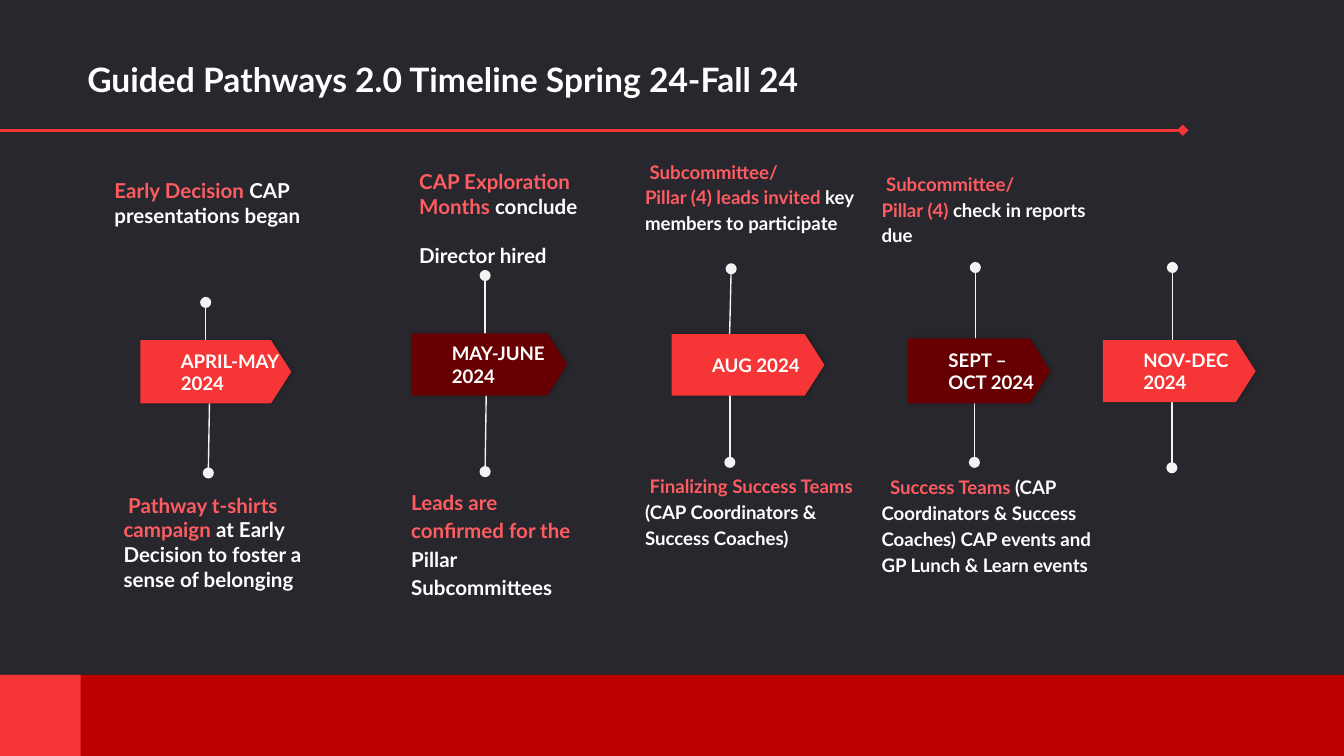
from lxml import etree
from pptx import Presentation
from pptx.dml.color import RGBColor
from pptx.enum.shapes import MSO_CONNECTOR, MSO_SHAPE
from pptx.enum.text import MSO_ANCHOR, PP_ALIGN
from pptx.oxml.ns import qn
from pptx.util import Pt

RECT, PENTAGON = MSO_SHAPE.RECTANGLE, MSO_SHAPE.PENTAGON
STRAIGHT = MSO_CONNECTOR.STRAIGHT
TOP, MIDDLE, BOTTOM = MSO_ANCHOR.TOP, MSO_ANCHOR.MIDDLE, MSO_ANCHOR.BOTTOM
LEFT = PP_ALIGN.LEFT

COLORS = {
    "back": "27272D",
    "red": "F63536",
    "band": "BC0000",
    "dark": "660003",
    "coral": "FF5C61",
    "white": "FFFFFF",
    "stem": "F3F3F3",
    "black": "000000",
}


def color(name):
    return RGBColor.from_string(COLORS[name])


def write(frame, paras, size=10, anchor=TOP, inset=(0, 0, 0, 0),
          spacing=1.0, gap=0, indent=0):
    """Fill a frame; each paragraph is a list of (text, color) runs."""
    frame.word_wrap = True
    frame.vertical_anchor = anchor
    (frame.margin_left, frame.margin_top,
     frame.margin_right, frame.margin_bottom) = map(Pt, inset)
    for i, runs in enumerate(paras):
        para = frame.add_paragraph() if i else frame.paragraphs[0]
        para.alignment = LEFT
        para.line_spacing = spacing
        if i:
            para.space_before = Pt(gap)
        elif indent:
            para._p.get_or_add_pPr().set("indent", str(Pt(indent)))
        for text, tint in runs:
            run = para.add_run()
            run.text = text
            run.font.name = "Lato"
            run.font.size = Pt(size)
            run.font.bold = True
            run.font.color.rgb = color(tint)


class Deck:
    def __init__(self):
        self.prs = Presentation()
        self.prs.slide_width, self.prs.slide_height = Pt(720), Pt(405)
        self.slide = self.prs.slides.add_slide(self.prs.slide_layouts[5])
        fill = self.slide.background.fill
        fill.solid()
        fill.fore_color.rgb = color("back")

    def title(self, text, box):
        shape = self.slide.shapes.title
        shape.left, shape.top, shape.width, shape.height = map(Pt, box)
        write(shape.text_frame, [[(text, "white")]], size=18,
              anchor=BOTTOM, inset=(11.5, 7.2, 7.2, 7.2))

    def block(self, kind, box, tint):
        shape = self.slide.shapes.add_shape(kind, *map(Pt, box))
        shape.shadow.inherit = False
        shape.fill.solid()
        shape.fill.fore_color.rgb = color(tint)
        shape.line.fill.background()
        return shape

    def tag(self, box, tint, lines):
        """Draw a date arrow with a soft shadow."""
        shape = self.block(PENTAGON, box, tint)
        shape.adjustments[0] = 0.32
        effects = shape._element.spPr.find(qn("a:effectLst"))
        shade = etree.SubElement(effects, qn("a:outerShdw"),
                                 blurRad=str(Pt(2.2)), dist=str(Pt(0.8)))
        tone = etree.SubElement(shade, qn("a:srgbClr"), val=COLORS["black"])
        etree.SubElement(tone, qn("a:alpha"), val="20000")
        write(shape.text_frame, [[(line, "white")] for line in lines],
              anchor=MIDDLE, inset=(21.6, 0, 0, 0))

    def line(self, ends, tint, width, head=None, tail=None):
        link = self.slide.shapes.add_connector(STRAIGHT, *map(Pt, ends))
        link.line.color.rgb = color(tint)
        link.line.width = Pt(width)
        pen = link.line._get_or_add_ln()
        for name, mark in (("a:headEnd", head), ("a:tailEnd", tail)):
            if mark:
                etree.SubElement(pen, qn(name), type=mark)
        etree.SubElement(link._element.spPr, qn("a:effectLst"))

    def note(self, box, paras, **style):
        shape = self.slide.shapes.add_textbox(*map(Pt, box))
        write(shape.text_frame, paras, **style)


STEMS = [
    (110.2, 201.6, 110.2, 162), (111.6, 253.4, 112.3, 211),
    (259.9, 187.2, 259.9, 147.6), (259.9, 252.7, 260.6, 203),
    (390.6, 191.5, 391.7, 144), (391, 247.7, 391, 208.8),
    (522.5, 189.4, 522.5, 143.3), (522, 247.7, 522, 208.8),
    (628.1, 189.4, 628.1, 143.3), (627.8, 250.6, 627.8, 211),
]

TAGS = [
    ((75.3, 182.3, 80.8, 33.8), "red", ["APRIL-MAY 2024"]),
    ((220.5, 178.6, 83.4, 33.3), "dark", ["MAY-JUNE", "2024"]),
    ((359.9, 179, 81.8, 33), "red", ["AUG 2024"]),
    ((486.5, 181.3, 76.3, 34.8), "dark", ["SEPT –OCT 2024"]),
    ((590.9, 182.3, 81.8, 33.1), "red", ["NOV-DEC 2024"]),
]

LARGE = {"size": 11, "anchor": BOTTOM}
LOOSE = {"spacing": 1.15}

NOTES = [
    ((61.3, 82, 108.7, 39.7),
     [[("Early Decision ", "coral"), ("CAP presentations began", "white")]],
     LARGE),
    ((224.6, 101.5, 98.6, 41.8),
     [[("CAP Exploration Months ", "coral"), ("conclude", "white")],
      [("Director hired", "white")]],
     {**LARGE, "gap": 13.2}),
    ((345.6, 84.2, 122.4, 84.2),
     [[("Subcommittee/", "coral")],
      [("Pillar (4) leads invited ", "coral"),
       ("key members to participate", "white")]],
     {**LOOSE, "indent": 2.5}),
    ((472.3, 90.7, 122.4, 52.6),
     [[("Subcommittee/", "coral")],
      [("Pillar (4) ", "coral"), ("check in reports due", "white")]],
     {**LOOSE, "indent": 2.5}),
    ((66.2, 267.8, 98.6, 49),
     [[("Pathway t-shirts campaign ", "coral"),
       ("at Early Decision to foster a sense of belonging", "white")]],
     {**LARGE, "indent": 2.5}),
    ((220.3, 260.6, 98.6, 42.5),
     [[("Leads are confirmed for the ", "coral"),
       ("Pillar Subcommittees", "white")]],
     {**LOOSE, "size": 11}),
    ((345.6, 252.7, 118.1, 85),
     [[("Finalizing Success Teams ", "coral"),
       ("(CAP Coordinators & Success Coaches)", "white")]],
     {**LOOSE, "indent": 2.5}),
    ((472.3, 253.4, 118.1, 85),
     [[("Success Teams ", "coral"),
       ("(CAP Coordinators & Success Coaches) CAP events and "
        "GP Lunch & Learn events", "white")]],
     {**LOOSE, "indent": 4.6}),
]


def main():
    deck = Deck()
    deck.line((0, 69.8, 633.6, 69.8), "red", 1.5, tail="diamond")
    deck.block(RECT, (0, 361.6, 720, 43.4), "band")
    deck.block(RECT, (0, 361.6, 43.2, 43.4), "red")
    deck.title("Guided Pathways 2.0 Timeline Spring 24-Fall 24",
               (35.3, 17.3, 607, 43.2))
    for ends in STEMS:
        deck.line(ends, "stem", 0.75, head="oval", tail="oval")
    for box, tint, lines in TAGS:
        deck.tag(box, tint, lines)
    for box, paras, style in NOTES:
        deck.note(box, paras, **style)
    deck.prs.save("out.pptx")


if __name__ == "__main__":
    main()
